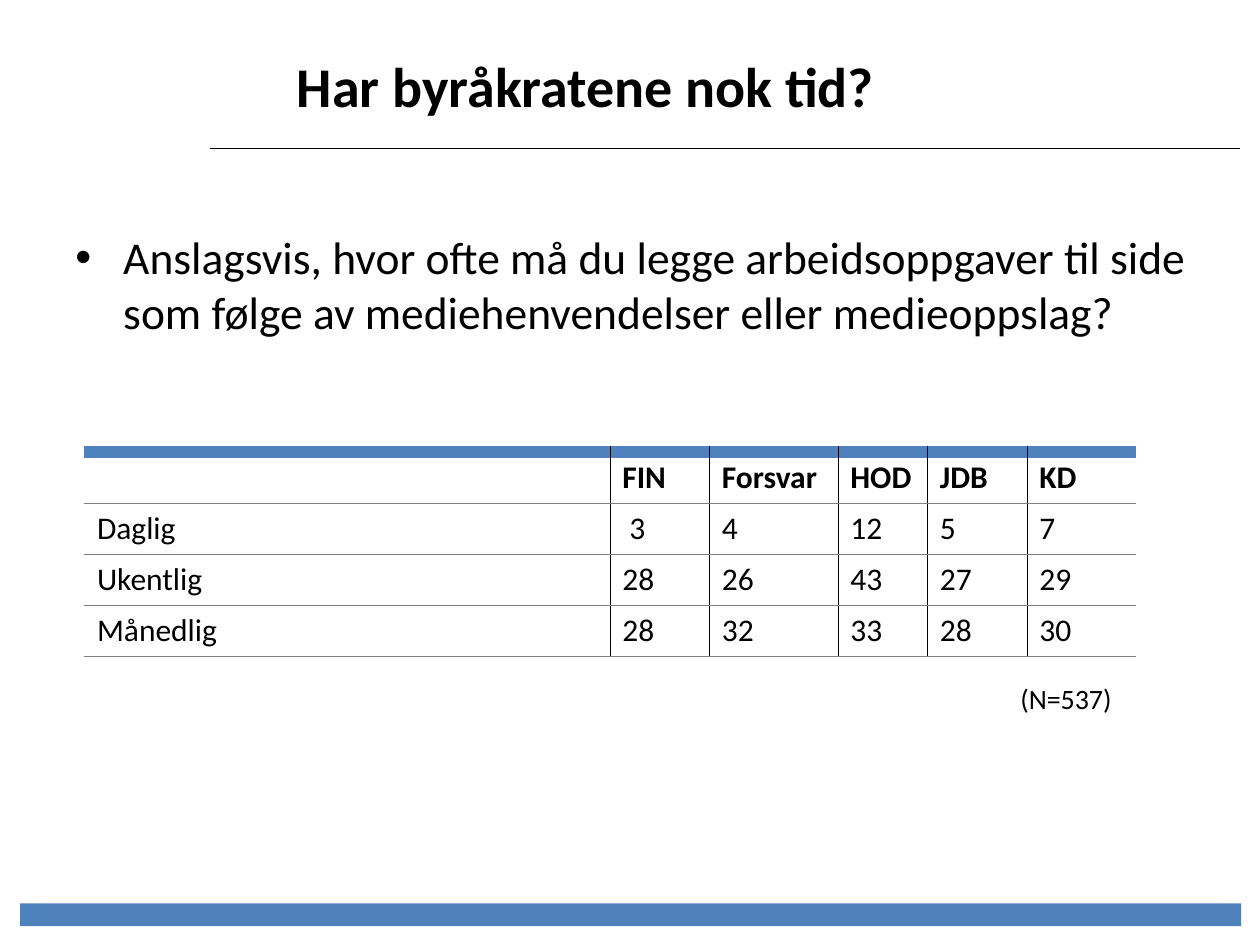
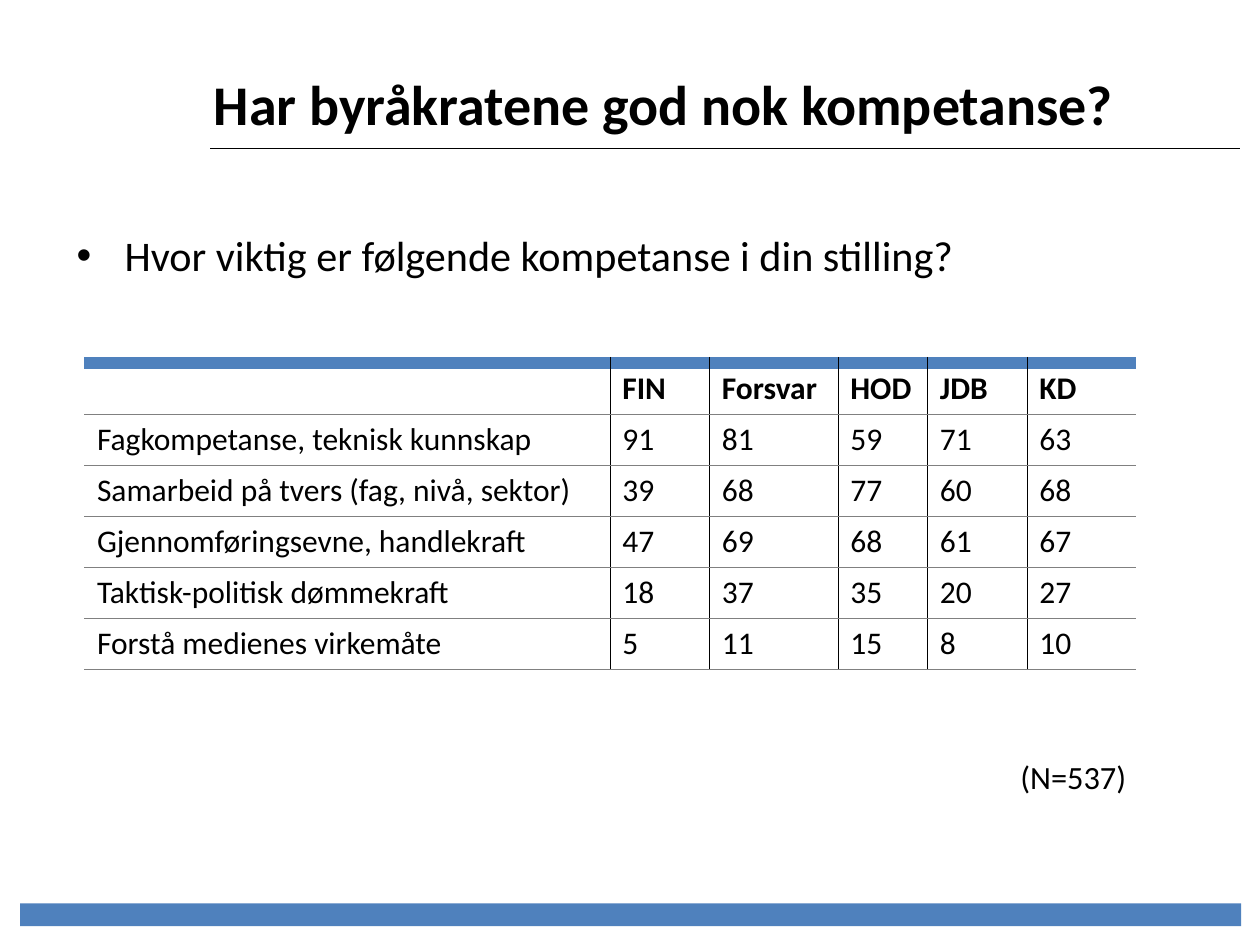
"""Build two slides on time and competence among bureaucrats, each with a survey table."""
import pptx
import pptx.dml.color
import pptx.enum.shapes
import pptx.enum.text
import pptx.oxml.ns
import pptx.util
from lxml import etree
from pptx.util import Inches, Pt

COLOURS = {"text": "000000", "band": "4F81BD", "column_rule": "000000", "row_rule": "808080"}
FONT = "Calibri"
TITLE_SIZE, TABLE_SIZE = 32, 18
TITLE_WIDTH, TITLE_HEIGHT = 8.36, 1.25
MINISTRIES = ["", "FIN", "Forsvar", "HOD", "JDB", "KD"]
COLUMN_WIDTHS = [4.17, 0.79, 1.02, 0.71, 0.79, 0.87]
TABLE_LEFT, ROW_HEIGHT = 0.67, 0.405
THIN, THICK = 0.25, 7.87

SLIDES = [
    {
        "title": "Har byråkratene nok tid?",
        "title_at": (0.47, 0.36),
        "question": "Anslagsvis, hvor ofte må du legge arbeidsoppgaver til side "
                    "som følge av mediehenvendelser eller medieoppslag?",
        "question_box": (0.5, 1.77, 9.3, 1.1),
        "question_size": 26,
        "table_top": 3.59,
        "rows": [
            ["Daglig", " 3", "4", "12", "5", "7"],
            ["Ukentlig", "28", "26", "43", "27", "29"],
            ["Månedlig", "28", "32", "33", "28", "30"],
        ],
        "sample_box": (8, 5.36, 1.2, 0.37),
        "sample_size": 16,
    },
    {
        "title": "Har byråkratene god nok kompetanse? ",
        "title_at": (1.14, 0.5),
        "question": "Hvor viktig er følgende kompetanse i din stilling?",
        "question_box": (0.51, 1.77, 9.29, 0.6),
        "question_size": 24.1,
        "table_top": 2.88,
        "rows": [
            ["Fagkompetanse, teknisk kunnskap", "91", "81", "59", "71", "63"],
            ["Samarbeid på tvers (fag, nivå, sektor)", "39", "68", "77", "60", "68"],
            ["Gjennomføringsevne, handlekraft", "47", "69", "68", "61", "67"],
            ["Taktisk-politisk dømmekraft", "18", "37", "35", "20", "27"],
            ["Forstå medienes virkemåte", "5", "11", "15", "8", "10"],
        ],
        "sample_box": (8, 5.96, 1.2, 0.41),
        "sample_size": 18.5,
    },
]
SAMPLE = "(N=537)"


def colour(name):
    return pptx.dml.color.RGBColor.from_string(COLOURS[name])


def add_xml(parent, tag, **attributes):
    return etree.SubElement(parent, pptx.oxml.ns.qn(tag), attributes)


def write(frame, text, size, bold=False):
    frame.text = text
    for span in frame.paragraphs[0].runs:
        span.font.name = FONT
        span.font.size = Pt(size)
        span.font.bold = bold
        span.font.color.rgb = colour("text")


def add_title(page, text, position):
    title = page.shapes.title
    title.left, title.top = map(Inches, position)
    title.width, title.height = Inches(TITLE_WIDTH), Inches(TITLE_HEIGHT)
    write(title.text_frame, text, TITLE_SIZE, bold=True)
    title.text_frame.vertical_anchor = pptx.enum.text.MSO_ANCHOR.TOP
    title.text_frame.paragraphs[0].alignment = pptx.enum.text.PP_ALIGN.CENTER


def add_frame_marks(page):
    rule = page.shapes.add_connector(
        pptx.enum.shapes.MSO_CONNECTOR.STRAIGHT,
        Inches(1.67), Inches(1.18), Inches(9.84), Inches(1.18))
    rule.line.color.rgb = colour("text")
    rule.line.width = Pt(0.5)
    add_xml(rule._element.spPr, "a:effectLst")
    band = page.shapes.add_shape(
        pptx.enum.shapes.MSO_SHAPE.RECTANGLE,
        Inches(0.16), Inches(7.17), Inches(9.69), Inches(0.18))
    band.shadow.inherit = False
    band.fill.solid()
    band.fill.fore_color.rgb = colour("band")
    band.line.fill.background()


def add_text(page, text, place, size, bullet=False):
    box = page.shapes.add_textbox(*map(Inches, place))
    box.text_frame.word_wrap = True
    write(box.text_frame, text, size)
    if bullet:
        indent = Inches(0.38)
        properties = box.text_frame.paragraphs[0]._p.get_or_add_pPr()
        properties.set("marL", str(indent))
        properties.set("indent", str(-indent))
        add_xml(properties, "a:buFont", typeface="Arial")
        add_xml(properties, "a:buChar", char="•")


def set_border(cell, side, name, width):
    properties = cell._tc.get_or_add_tcPr()
    if name is None:
        add_xml(add_xml(properties, "a:ln" + side, w="0"), "a:noFill")
        return
    line = add_xml(properties, "a:ln" + side, w=str(Pt(width)))
    add_xml(add_xml(line, "a:solidFill"), "a:srgbClr", val=COLOURS[name])


def add_survey_table(page, rows, top):
    lines = [MINISTRIES] + rows
    table = page.shapes.add_table(
        len(lines), len(MINISTRIES), Inches(TABLE_LEFT), Inches(top),
        Inches(sum(COLUMN_WIDTHS)), Inches(ROW_HEIGHT * len(lines))).table
    table.first_row = table.horz_banding = False
    for column, width in zip(table.columns, COLUMN_WIDTHS):
        column.width = Inches(width)
    last = len(MINISTRIES) - 1
    for i, line in enumerate(lines):
        table.rows[i].height = Inches(ROW_HEIGHT)
        for j, text in enumerate(line):
            cell = table.cell(i, j)
            set_border(cell, "L", "column_rule" if j > 0 else None, THIN)
            set_border(cell, "R", "column_rule" if j < last else None, THIN)
            set_border(cell, "T", "row_rule" if i else "band", THIN if i else THICK)
            set_border(cell, "B", "row_rule", THIN)
            cell.fill.background()
            write(cell.text_frame, text, TABLE_SIZE, bold=i == 0)


def main():
    deck = pptx.Presentation()
    deck.slide_width, deck.slide_height = Inches(10), Inches(7.5)
    title_only = deck.slide_layouts.get_by_name("Title Only")
    for content in SLIDES:
        page = deck.slides.add_slide(title_only)
        add_frame_marks(page)
        add_title(page, content["title"], content["title_at"])
        add_text(page, content["question"], content["question_box"],
                 content["question_size"], bullet=True)
        add_survey_table(page, content["rows"], content["table_top"])
        add_text(page, SAMPLE, content["sample_box"], content["sample_size"])
    deck.save("out.pptx")


if __name__ == "__main__":
    main()
